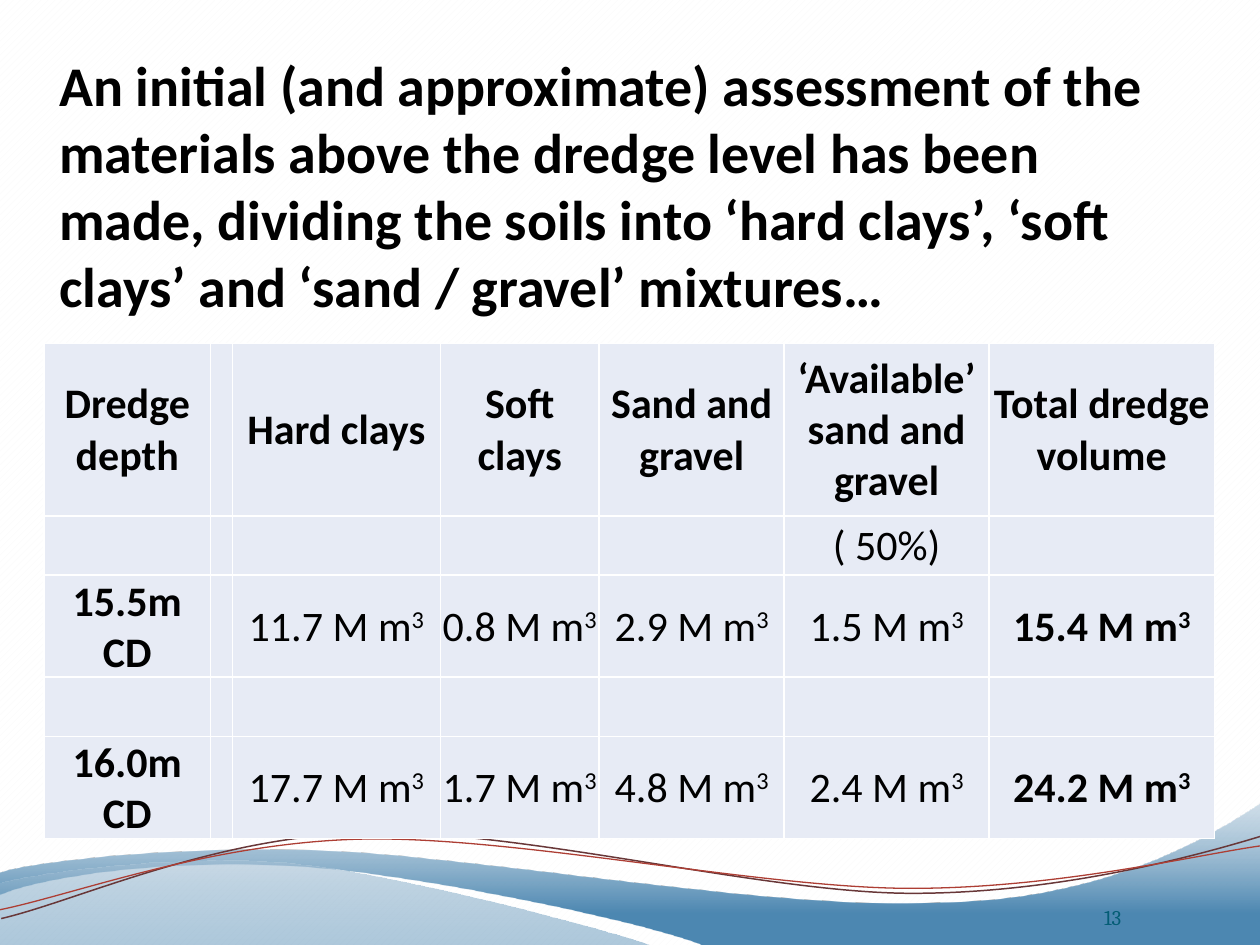
from dataclasses import dataclass
from typing import NamedTuple, Optional

from lxml import etree
from pptx import Presentation
from pptx import util as u
from pptx.dml.color import RGBColor
from pptx.enum import dml, text
from pptx.oxml.ns import qn

# The slide is a grid of 100 columns by 75 rows of square units.
UNIT = u.Inches(0.1)


@dataclass(frozen=True)
class Theme:
    ink: str = "000000"
    paper: str = "FFFFFF"
    hatch: str = "F9F9F9"
    cell: str = "E7EBF5"
    page_number: str = "045D75"
    deep: str = "4C87B1"
    pale: str = "ACC5D8"
    maroon: str = "683738"
    red: str = "AD3E34"
    body_font: str = "Calibri"
    number_font: str = "Cambria"
    title_size: int = 32
    table_size: int = 24
    number_size: int = 12


THEME = Theme()


class Stop(NamedTuple):
    position: float
    colour: str
    opacity: int


class Wave(NamedTuple):
    """Segments hold one point for a straight line, three for a Bezier curve."""
    start: tuple
    segments: list
    stops: Optional[list] = None
    line: Optional[str] = None
    width: float = 0


class Depth(NamedTuple):
    label: str
    volumes: list
    total: str


WAVES = [
    Wave((100, 75.1),
         [(56, 75.1), (52.4, 73.4, 33.5, 69.4, 24.2, 68.8),
          (14.8, 68.1, 4.2, 69.3, 0, 71), (0, 70.1, -0.1, 70.2, -0.1, 69.3),
          (1.7, 68.5, 13, 67.1, 25.4, 67.5), (37.8, 67.9, 61.8, 72.3, 74.3, 71.6),
          (87.1, 71.5, 95.4, 66.8, 100.1, 63.7), (100.1, 67.5, 100, 71.3, 100, 75.1)],
         stops=[Stop(0, THEME.pale, 55), Stop(0.77, THEME.deep, 100)]),
    Wave((52, 75.1),
         [(48.9, 73.9, 31.7, 69.3, 23, 68.5), (14.3, 67.7, 3.6, 69.1, -0.2, 70.1),
          (-0.2, 71.8, -0.1, 73.4, -0.1, 75.1), (52, 75.1)],
         stops=[Stop(0, THEME.pale, 60), Stop(1, THEME.deep, 45)]),
    Wave((100.3, 66.3),
         [(95.4, 67.8, 84.3, 70.9, 72.4, 70.9), (60.5, 70.9, 41, 65.7, 28.9, 66.1),
          (16.9, 66.4, 6.1, 71.5, 0.1, 72.9)], line=THEME.maroon, width=0.85),
    Wave((100.3, 67.1),
         [(95.6, 67.7, 83.8, 70.6, 71.8, 70.5), (59.9, 70.4, 40.5, 66.3, 28.6, 66.6),
          (16.6, 66.9, 5.9, 71, 0, 72.2)], line=THEME.red, width=0.75),
]

TITLE = ("An initial (and approximate) assessment of the materials above the dredge "
         "level has been made, dividing the soils into ‘hard clays’, ‘soft clays’ "
         "and ‘sand / gravel’ mixtures…")
HEADINGS = ["Dredge depth", "", "Hard clays", "Soft clays", "Sand and gravel",
            "‘Available’ sand and gravel", "Total dredge volume"]
AVAILABLE_SHARE = "( 50%)"
AVAILABLE_COLUMN = 5
DEPTHS = {
    2: Depth("15.5m CD", ["11.7", "0.8", "2.9", "1.5"], "15.4"),
    4: Depth("16.0m CD", ["17.7", "1.7", "4.8", "2.4"], "24.2"),
}
COLUMN_WIDTHS = [13.2, 1.75, 16.5, 12.6, 14.7, 16.25, 17.9]
ROW_HEIGHTS = [13.7] + [4.7] * 4
TABLE_HEIGHT = 39.2  # the two depth rows grow to hold two lines


def grid(count: float) -> u.Emu:
    return u.Emu(round(count * UNIT))


def rgb(colour: str) -> RGBColor:
    return RGBColor.from_string(colour)


def bend(shape, segments: list) -> None:
    """Join the straight steps of each three-point segment into one curve."""
    steps = iter(list(shape._element.iter(qn("a:lnTo"))))
    for segment in segments:
        group = [next(steps) for _ in range(len(segment) // 2)]
        if len(group) == 3:
            curve = etree.Element(qn("a:cubicBezTo"))
            group[0].addprevious(curve)
            for step in group:
                curve.append(step[0])
                step.getparent().remove(step)


def draw_wave(page, wave: Wave) -> None:
    points = [(grid(x), grid(y)) for segment in wave.segments
              for x, y in zip(segment[::2], segment[1::2])]
    builder = page.shapes.build_freeform(*map(grid, wave.start))
    builder.add_line_segments(points, close=wave.stops is not None)
    shape = builder.convert_to_shape()
    bend(shape, wave.segments)
    shape.shadow.inherit = False
    if wave.stops:
        shape.line.fill.background()
        shape.fill.gradient()
        shape.fill.gradient_angle = 270
        for target, stop in zip(shape.fill.gradient_stops, wave.stops):
            target.position = stop.position
            target.color.rgb = rgb(stop.colour)
        for node, stop in zip(shape._element.iter(qn("a:gs")), wave.stops):
            etree.SubElement(node[0], qn("a:alpha"), val=str(stop.opacity * 1000))
    else:
        shape.fill.background()
        shape.line.color.rgb = rgb(wave.line)
        shape.line.width = u.Pt(wave.width)


def write(frame, words: str, *, size: int, font: str = THEME.body_font,
          colour: str = THEME.ink, bold: bool = False,
          align=text.PP_ALIGN.LEFT) -> None:
    """Fill a text frame; whatever follows a caret is raised."""
    para = frame.paragraphs[0]
    para.alignment = align
    for index, part in enumerate(words.split("^")):
        span = para.add_run()
        span.text = part
        span.font.name, span.font.size, span.font.bold = font, u.Pt(size), bold
        span.font.color.rgb = rgb(colour)
        if index:
            span._r.get_or_add_rPr().set("baseline", "30000")


def add_box(page, left: float, top: float, width: float, height: float,
            words: str, *, inset: float = 0, anchor=text.MSO_ANCHOR.TOP, **style) -> None:
    box = page.shapes.add_textbox(*map(grid, (left, top, width, height)))
    frame = box.text_frame
    frame.word_wrap = True
    frame.vertical_anchor = anchor
    frame.margin_left = frame.margin_right = frame.margin_bottom = 0
    frame.margin_top = grid(inset)
    write(frame, words, **style)


def format_cell(cell) -> None:
    cell.fill.solid()
    cell.fill.fore_color.rgb = rgb(THEME.cell)
    cell.vertical_anchor = text.MSO_ANCHOR.MIDDLE
    cell.margin_left = cell.margin_right = cell.margin_top = grid(0.1)
    cell.margin_bottom = 0
    properties = cell._tc.get_or_add_tcPr()
    for index, side in enumerate(("lnL", "lnR", "lnT", "lnB")):
        border = etree.Element(qn(f"a:{side}"), w=str(u.Pt(1)))
        fill = etree.SubElement(border, qn("a:solidFill"))
        etree.SubElement(fill, qn("a:srgbClr"), val=THEME.paper)
        properties.insert(index, border)


def table_words(row: int) -> list:
    if row == 0:
        return HEADINGS
    words = [""] * len(HEADINGS)
    if row == 1:
        words[AVAILABLE_COLUMN] = AVAILABLE_SHARE
    elif row in DEPTHS:
        depth = DEPTHS[row]
        amounts = [f"{amount} M m^3" for amount in (*depth.volumes, depth.total)]
        words = [depth.label, "", *amounts]
    return words


def add_volume_table(page, left: float, top: float) -> None:
    extent = map(grid, (left, top, sum(COLUMN_WIDTHS), TABLE_HEIGHT))
    holder = page.shapes.add_table(len(ROW_HEIGHTS), len(COLUMN_WIDTHS), *extent)
    table = holder.table
    table.first_row = table.horz_banding = False
    for column, width in zip(table.columns, COLUMN_WIDTHS):
        column.width = grid(width)
    for index, height in enumerate(ROW_HEIGHTS):
        table.rows[index].height = grid(height)
        for place, words in enumerate(table_words(index)):
            cell = table.cell(index, place)
            format_cell(cell)
            if words:
                write(cell.text_frame, words, size=THEME.table_size,
                      bold=index == 0 or place in (0, len(HEADINGS) - 1),
                      align=text.PP_ALIGN.CENTER)
    holder.height = grid(TABLE_HEIGHT)


def main() -> None:
    deck = Presentation()
    deck.slide_width, deck.slide_height = grid(100), grid(75)
    page = deck.slides.add_slide(deck.slide_layouts[6])
    backdrop = page.background.fill
    backdrop.patterned()
    backdrop.pattern = dml.MSO_PATTERN.WIDE_UPWARD_DIAGONAL
    backdrop.fore_color.rgb = rgb(THEME.hatch)
    backdrop.back_color.rgb = rgb(THEME.paper)
    for wave in WAVES:
        draw_wave(page, wave)
    add_box(page, 4.7, 3.5, 89.4, 22, TITLE, inset=0.5, size=THEME.title_size, bold=True)
    add_box(page, 80.7, 69.8, 8.3, 4, "13", anchor=text.MSO_ANCHOR.BOTTOM,
            size=THEME.number_size, font=THEME.number_font,
            colour=THEME.page_number, align=text.PP_ALIGN.RIGHT)
    add_volume_table(page, 3.5, 27.25)
    deck.save("out.pptx")


if __name__ == "__main__":
    main()
